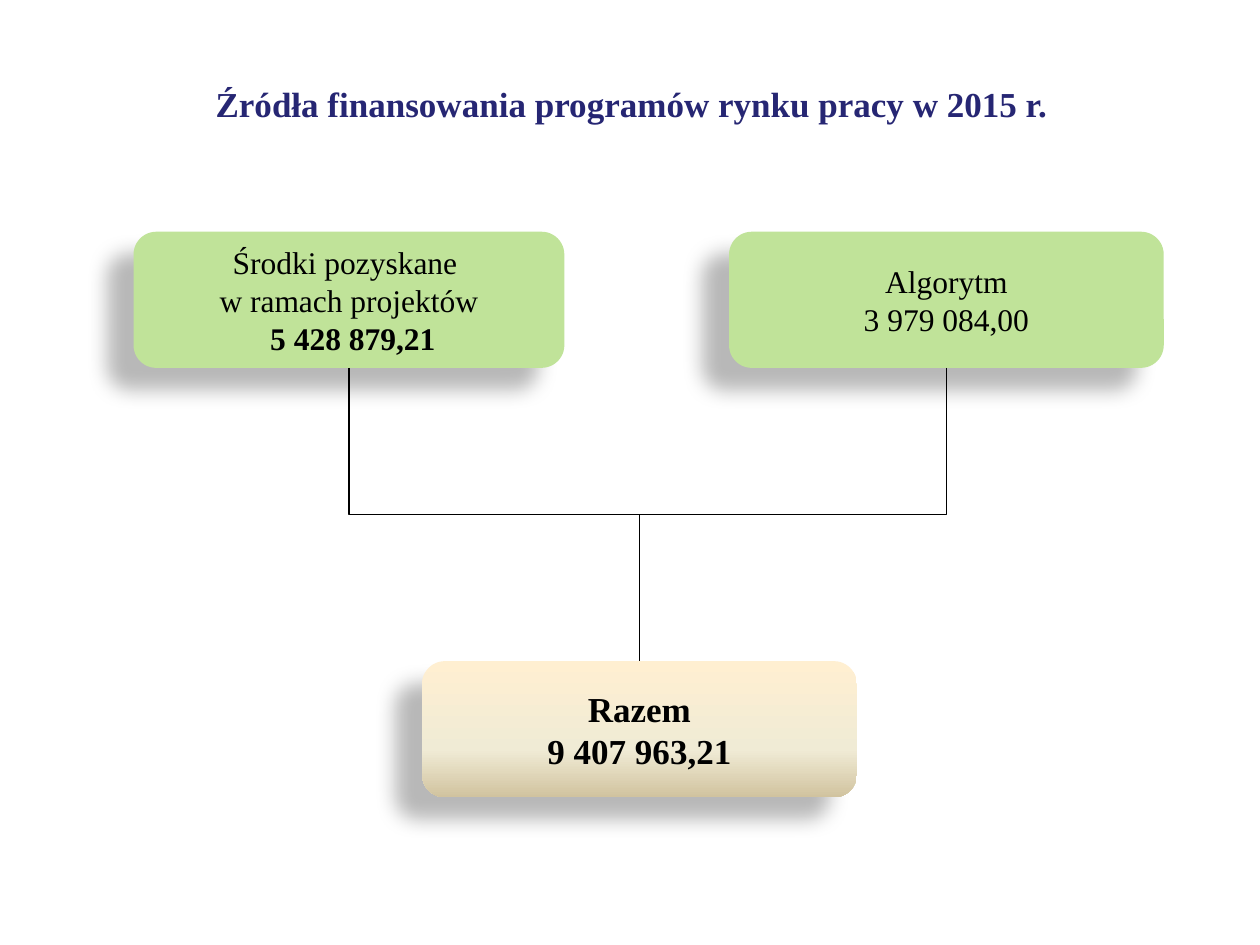
from copy import deepcopy
from dataclasses import dataclass

from lxml import etree
from pptx import Presentation
from pptx.dml.color import RGBColor
from pptx.enum.shapes import MSO_CONNECTOR, MSO_SHAPE
from pptx.enum.text import MSO_ANCHOR, PP_ALIGN
from pptx.oxml import parse_xml
from pptx.oxml.ns import qn
from pptx.shapes.autoshape import Shape
from pptx.slide import Slide
from pptx.util import Pt

ROUNDED = MSO_SHAPE.ROUNDED_RECTANGLE
ELBOW = MSO_CONNECTOR.ELBOW
CENTER, LEFT = PP_ALIGN.CENTER, PP_ALIGN.LEFT
MIDDLE = MSO_ANCHOR.MIDDLE

NAVY = RGBColor(0x26, 0x26, 0x73)
BLACK = RGBColor(0x00, 0x00, 0x00)
GREEN = RGBColor(0xC0, 0xE3, 0x99)
CREAM = RGBColor(0xFF, 0xEF, 0xD1)
IVORY = RGBColor(0xF0, 0xEB, 0xD5)
SAND = RGBColor(0xD1, 0xC3, 0x9F)

FONT = "Times New Roman"
BOX_HEIGHT = 77.8
TOP, BOTTOM = 0, 2  # connection sites

SHADOW = (
    '<a:effectLst xmlns:a="http://schemas.openxmlformats.org/drawingml/2006/main">'
    '<a:outerShdw blurRad="149860" dist="250190" dir="8460000" algn="ctr" rotWithShape="0">'
    '<a:srgbClr val="000000"><a:alpha val="28000"/></a:srgbClr>'
    "</a:outerShdw></a:effectLst>"
)


@dataclass
class Line:
    text: str
    bold: bool = False


@dataclass
class Amount:
    left: float
    top: float
    width: float
    size: int
    lines: list[Line]
    stops: list[tuple[float, RGBColor]]  # one stop means a solid fill


PROJECTS = Amount(76.3, 132.4, 246.2, 18,
                  [Line("Środki pozyskane "), Line("w ramach projektów"),
                   Line(" 5 428 879,21", True)],
                  [(0, GREEN)])
ALGORITHM = Amount(416.6, 132.4, 248.4, 18,
                   [Line("Algorytm"), Line("3 979 084,00")], [(0, GREEN)])
TOTAL = Amount(241.2, 377.8, 248.4, 20,
               [Line("Razem", True), Line("9 407 963,21", True)],
               [(0, CREAM), (0.65, IVORY), (1, SAND)])


def add_run(paragraph, text: str, size: int, color: RGBColor, bold: bool) -> None:
    run = paragraph.add_run()
    run.text = text
    run.font.name = FONT
    run.font.size = Pt(size)
    run.font.bold = bold
    run.font.color.rgb = color


def fill_box(box: Shape, stops: list[tuple[float, RGBColor]]) -> None:
    if len(stops) == 1:
        box.fill.solid()
        box.fill.fore_color.rgb = stops[0][1]
        return
    box.fill.gradient()
    box.fill.gradient_angle = 270
    stop_list = box._element.spPr.find(".//" + qn("a:gsLst"))
    while len(stop_list) < len(stops):
        stop_list.append(deepcopy(stop_list[0]))
    for stop, (position, color) in zip(box.fill.gradient_stops, stops):
        stop.position = position
        stop.color.rgb = color


def add_amount(slide: Slide, amount: Amount) -> Shape:
    box = slide.shapes.add_shape(ROUNDED, Pt(amount.left), Pt(amount.top),
                                 Pt(amount.width), Pt(BOX_HEIGHT))
    box.adjustments[0] = 0.167
    fill_box(box, amount.stops)
    box.line.fill.background()
    box._element.spPr.append(parse_xml(SHADOW))

    frame = box.text_frame
    frame.word_wrap = False
    frame.vertical_anchor = MIDDLE
    frame.margin_left = frame.margin_right = frame.margin_top = frame.margin_bottom = 0
    paragraph = frame.paragraphs[0]
    paragraph.alignment = CENTER
    for index, line in enumerate(amount.lines):
        if index:
            paragraph.add_line_break()
        add_run(paragraph, line.text, amount.size, BLACK, line.bold)
    return box


def add_branch(slide: Slide, source: Shape, target: Shape) -> None:
    """Draw an elbow that leaves the source downwards and enters the target's top."""
    start_x, start_y = source.left + source.width // 2, source.top + source.height
    end_x, end_y = target.left + target.width // 2, target.top
    branch = slide.shapes.add_connector(ELBOW, start_x, start_y, end_x, end_y)
    branch.begin_connect(source, BOTTOM)
    branch.end_connect(target, TOP)
    branch.line.color.rgb = BLACK
    branch.line.width = Pt(0.75)
    properties = branch._element.spPr
    etree.SubElement(properties, qn("a:effectLst"))

    # A quarter turn makes the outer legs vertical, so the frame's sides swap
    goes_right = end_x > start_x
    drop, span = end_y - start_y, abs(end_x - start_x)
    branch.left = (start_x + end_x - drop) // 2
    branch.top = (start_y + end_y - span) // 2
    branch.width, branch.height = drop, span
    frame = properties.find(qn("a:xfrm"))
    frame.set("rot", str((270 if goes_right else 90) * 60000))
    frame.set("flipH", "1" if goes_right else "0")


def add_title(slide: Slide, text: str) -> None:
    title = slide.shapes.title
    title.left, title.top, title.width, title.height = Pt(116), Pt(43.2), Pt(509), Pt(31.6)
    frame = title.text_frame
    frame.word_wrap = True
    frame.vertical_anchor = MIDDLE
    paragraph = frame.paragraphs[0]
    paragraph.alignment = LEFT
    add_run(paragraph, text, 20, NAVY, True)


def main() -> None:
    deck = Presentation()
    deck.slide_width, deck.slide_height = Pt(720), Pt(540)
    slide = deck.slides.add_slide(deck.slide_layouts[5])
    add_title(slide, "Źródła finansowania programów rynku pracy w 2015 r.")

    # Two sources of funds and their sum
    algorithm, projects, total = (
        add_amount(slide, amount) for amount in (ALGORITHM, PROJECTS, TOTAL))

    # Both sources lead to the sum
    for source in (projects, algorithm):
        add_branch(slide, source, total)

    deck.save("out.pptx")


if __name__ == "__main__":
    main()
